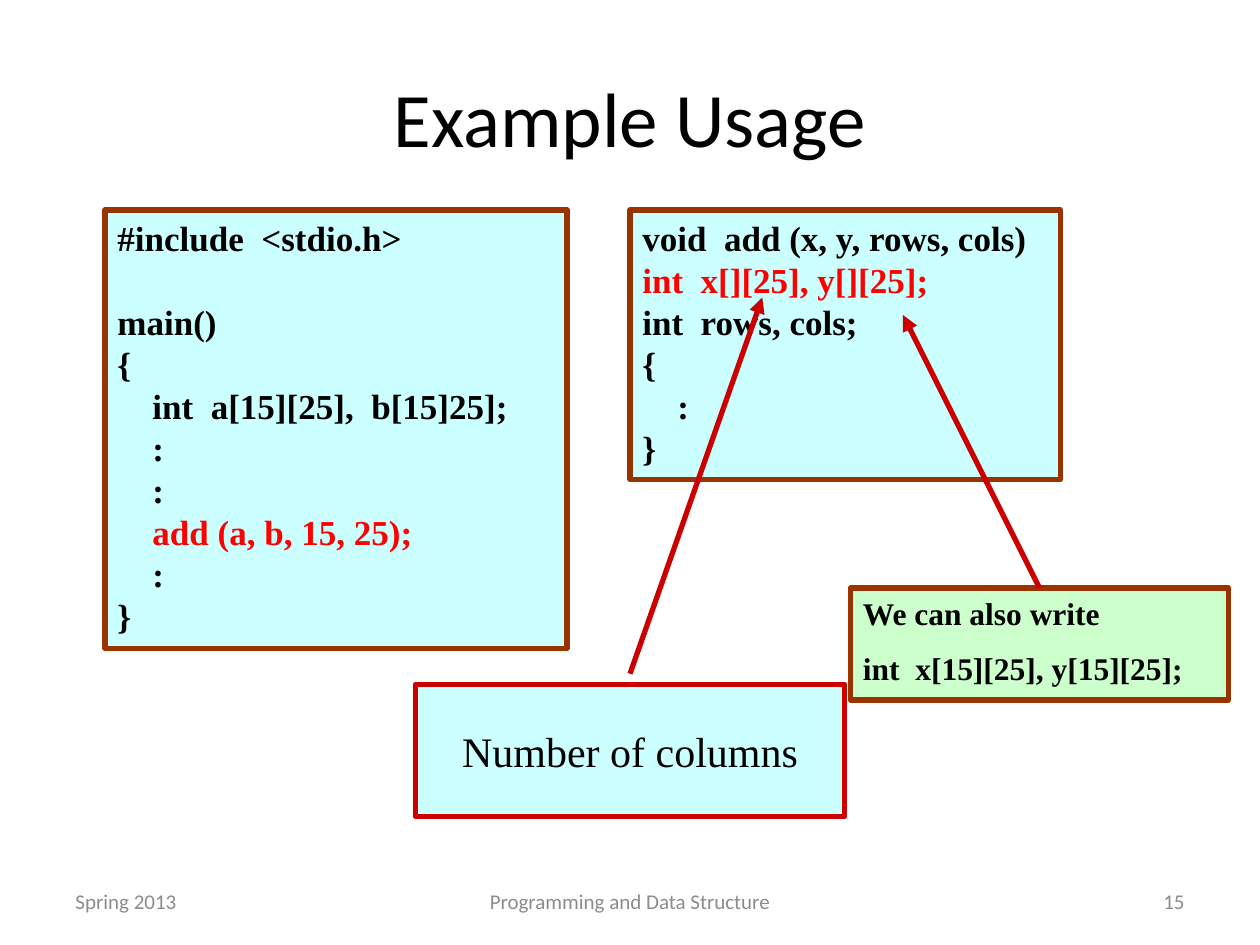
from dataclasses import dataclass

from lxml import etree
from pptx import Presentation
from pptx.dml.color import RGBColor
from pptx.enum import shapes, text
from pptx.oxml import ns
from pptx.util import Pt

BLACK = RGBColor(0x00, 0x00, 0x00)
GRAY = RGBColor(0x8C, 0x8C, 0x8C)
RED = RGBColor(0xFF, 0x00, 0x00)
DARK_RED = RGBColor(0xCC, 0x00, 0x00)
BROWN = RGBColor(0x99, 0x33, 0x00)
CYAN = RGBColor(0xCC, 0xFF, 0xFF)
GREEN = RGBColor(0xCC, 0xFF, 0xCC)

SANS, SERIF = "Calibri", "Times New Roman"
LEFT, CENTER, RIGHT = text.PP_ALIGN.LEFT, text.PP_ALIGN.CENTER, text.PP_ALIGN.RIGHT
LINE_WIDTH = Pt(3)
INDENT = Pt(20)


@dataclass
class Line:
    text: str
    color: RGBColor = BLACK
    indented: bool = False
    before: float = 0


@dataclass
class Label:
    bounds: tuple[float, float, float, float]
    line: Line
    size: float
    align: text.PP_ALIGN


@dataclass
class Box:
    bounds: tuple[float, float, float, float]
    lines: list[Line]
    size: float
    fill: RGBColor = CYAN
    border: RGBColor = BROWN
    callout: bool = False


def add_line(p, line: Line, font: str, size: float, bold: bool, align) -> None:
    p.alignment = align
    p.space_before = Pt(line.before)
    if line.indented:
        p._p.get_or_add_pPr().set("marL", str(INDENT))
    r = p.add_run()
    r.text = line.text
    r.font.name, r.font.size, r.font.bold = font, Pt(size), bold
    r.font.color.rgb = line.color


def add_label(s, label: Label) -> None:
    tf = s.shapes.add_textbox(*map(Pt, label.bounds)).text_frame
    tf.word_wrap = True
    tf.vertical_anchor = text.MSO_ANCHOR.MIDDLE
    add_line(tf.paragraphs[0], label.line, SANS, label.size, False, label.align)


def add_box(s, box: Box):
    sp = s.shapes.add_shape(shapes.MSO_SHAPE.RECTANGLE, *map(Pt, box.bounds))
    sp.shadow.inherit = False
    sp.fill.solid()
    sp.fill.fore_color.rgb = box.fill
    sp.line.color.rgb = box.border
    sp.line.width = LINE_WIDTH
    tf = sp.text_frame
    tf.word_wrap = not box.callout
    tf.vertical_anchor = text.MSO_ANCHOR.MIDDLE if box.callout else text.MSO_ANCHOR.TOP
    if not box.callout:
        tf.auto_size = text.MSO_AUTO_SIZE.SHAPE_TO_FIT_TEXT
    for i, line in enumerate(box.lines):
        p = tf.add_paragraph() if i else tf.paragraphs[0]
        add_line(p, line, SERIF, box.size, not box.callout,
                 CENTER if box.callout else LEFT)
    return sp


def add_arrow(s, start: tuple[float, float], end: tuple[float, float]):
    arrow = s.shapes.add_connector(shapes.MSO_CONNECTOR.STRAIGHT, *map(Pt, start + end))
    arrow.line.color.rgb = DARK_RED
    arrow.line.width = LINE_WIDTH
    etree.SubElement(arrow.line._get_or_add_ln(), ns.qn("a:tailEnd"), type="triangle")
    etree.SubElement(arrow._element.spPr, ns.qn("a:effectLst"))
    return arrow


LABELS = [
    Label((36, 21.6, 648, 90), Line("Example Usage"), 44, CENTER),
    Label((36, 500.4, 168, 28.8), Line("Spring 2013", GRAY), 12, LEFT),
    Label((246, 500.4, 228, 28.8), Line("Programming and Data Structure", GRAY), 12, CENTER),
    Label((516, 500.4, 168, 28.8), Line("15", GRAY), 12, RIGHT),
]

MAIN_CODE = Box((60, 120, 264, 250.5), [
    Line("#include  <stdio.h>"),
    Line("main()", before=24),
    Line("{"),
    Line("int  a[15][25],  b[15]25];", indented=True),
    Line(":", indented=True),
    Line(":", indented=True),
    Line("add (a, b, 15, 25);", RED, indented=True),
    Line(":", indented=True),
    Line("}"),
], 20)

ADD_CODE = Box((360, 120, 246, 154), [
    Line("void  add (x, y, rows, cols)"),
    Line("int  x[][25], y[][25];", RED),
    Line("int  rows, cols;"),
    Line("{"),
    Line(":", indented=True),
    Line("}"),
], 20)

NOTE = Box((486, 336, 216, 64), [
    Line("We can also write"),
    Line("int  x[15][25], y[15][25];", before=10),
], 18, fill=GREEN)

COLUMNS = Box((237.5, 391, 245, 75.6), [Line("Number of columns")], 24,
              border=DARK_RED, callout=True)


def main() -> None:
    prs = Presentation()
    prs.slide_width, prs.slide_height = Pt(720), Pt(540)
    s = prs.slides.add_slide(prs.slide_layouts[6])

    # Title and footer
    for label in LABELS:
        add_label(s, label)

    # Code listings
    add_box(s, MAIN_CODE)
    add_box(s, ADD_CODE)

    # Alternative declaration, pointing at the parameters
    note = add_box(s, NOTE)
    add_arrow(s, (594, 336), (516, 180)).begin_connect(note, 0)

    # Explanation of the second dimension
    add_box(s, COLUMNS)
    add_arrow(s, (360, 385), (435.6, 170))

    prs.save("out.pptx")


if __name__ == "__main__":
    main()
